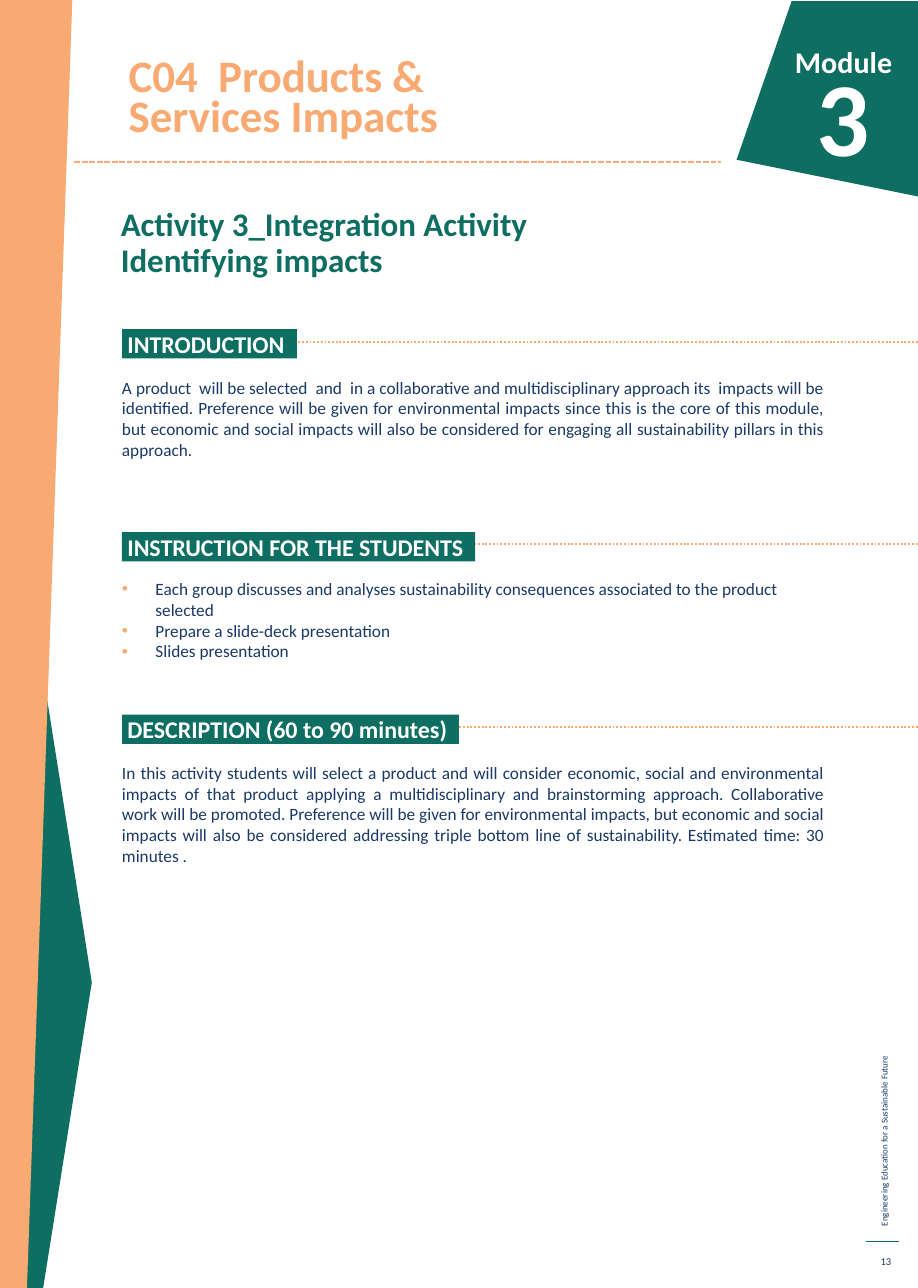
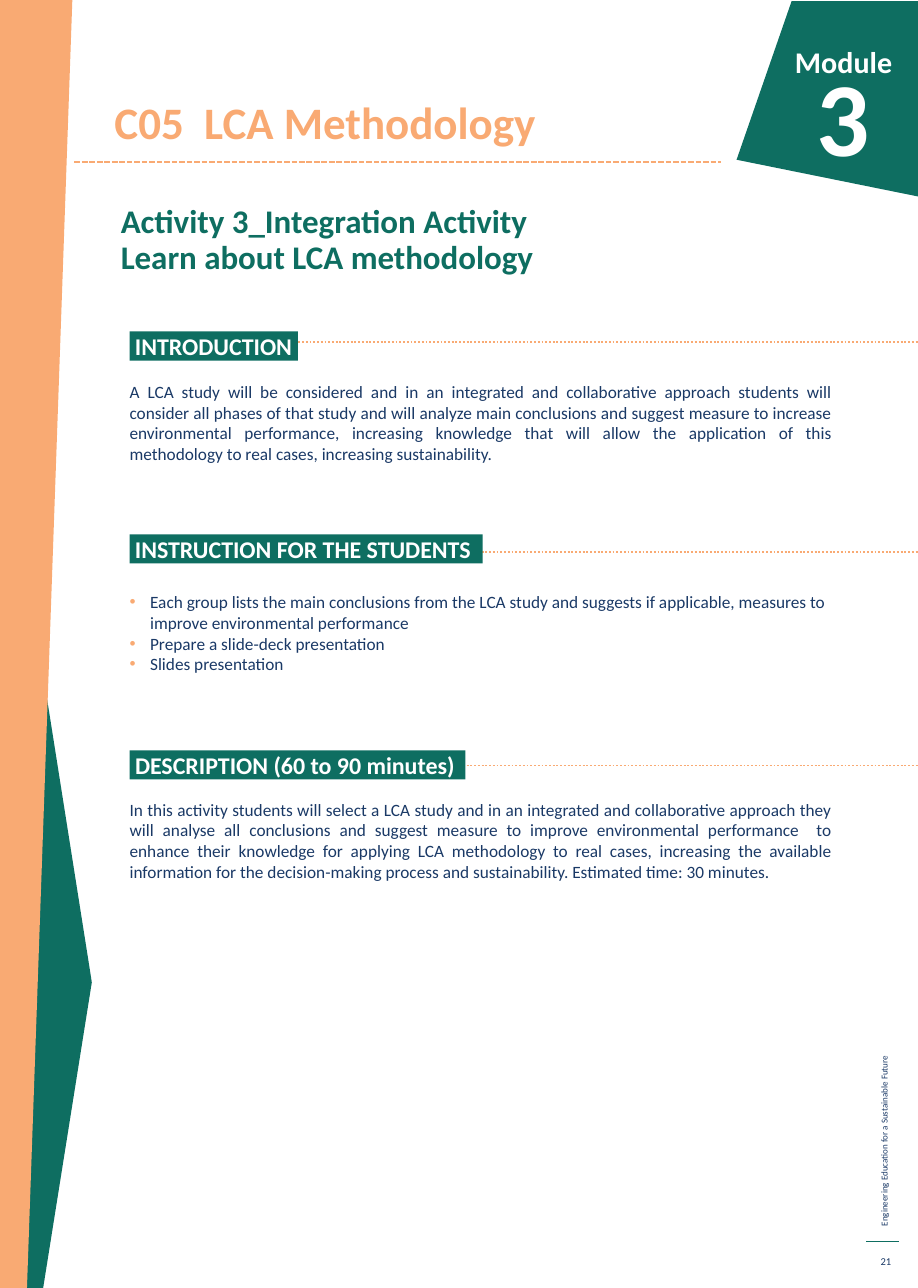
from dataclasses import dataclass

from lxml import etree
from pptx import Presentation
from pptx.dml.color import RGBColor
from pptx.enum.dml import MSO_LINE
from pptx.enum.shapes import MSO_CONNECTOR
from pptx.enum.text import MSO_ANCHOR, MSO_AUTO_SIZE, PP_ALIGN
from pptx.oxml.ns import qn
from pptx.util import Inches, Pt

PAGE_WIDTH, PAGE_HEIGHT = 8.5, 11.93
GREEN, ORANGE, NAVY, WHITE = "0E6E61", "F9AA73", "1A3966", "FFFFFF"
FONT = "Calibri"
TITLE_ONLY = 5
LEFT, RIGHT, JUSTIFY = PP_ALIGN.LEFT, PP_ALIGN.RIGHT, PP_ALIGN.JUSTIFY
TOP, MIDDLE, BOTTOM = MSO_ANCHOR.TOP, MSO_ANCHOR.MIDDLE, MSO_ANCHOR.BOTTOM
DOTS, DASHES = MSO_LINE.ROUND_DOT, MSO_LINE.SQUARE_DOT
NO_AUTOFIT = MSO_AUTO_SIZE.NONE
STRAIGHT = MSO_CONNECTOR.STRAIGHT
DEFAULT_INSETS = (0.1, 0.05)
NO_INSETS = (0, 0)

SIDE_BAND = [(0, 0), (0.67, 0), (0.25, 11.93), (0, 11.93)]
SIDE_ARROW = [(0.4, 11.93), (0.23, 11.93), (0.23, 5.17), (0.83, 8.97), (0.85, 9.1)]
MODULE_BADGE = [(8.5, 0.01), (7.33, 0.01), (6.82, 1.48), (8.5, 1.82)]

LABEL_HEIGHT = 0.27
RULE_LEFT = 2.52
BODY_WIDTH = 6.5


@dataclass
class Section:
    """A labelled block of text; bullets when indent is set."""
    heading: str
    label_top: float
    label_width: float
    rule_top: float
    body_top: float
    body_height: float
    lines: list
    indent: float = 0


@dataclass
class Activity:
    """The content of one activity page."""
    number: str
    title: str
    title_area: tuple
    subtitle: str
    subtitle_area: tuple
    body_left: float
    sections: list


ACTIVITIES = [
    Activity(
        "13", "C04  Products &\vServices Impacts", (1.09, 0, 5.58, 1.36),
        "Activity 3_Integration Activity\vIdentifying impacts",
        (1.02, 1.88, 4.39, 1.05), 1.13,
        [
            Section("INTRODUCTION", 3.05, 1.62, 3.17, 3.49, 0.8, [
                "A product  will be selected  and  in a collaborative and multidisciplinary "
                "approach its  impacts will be identified. Preference will be given for "
                "environmental impacts since this is the core of this module, but economic "
                "and social impacts will also be considered for engaging all sustainability "
                "pillars in this approach."]),
            Section("INSTRUCTION FOR THE STUDENTS", 4.93, 3.27, 5.04, 5.36, 0.8, [
                "Each group discusses and analyses sustainability consequences associated "
                "to the product selected",
                "Prepare a slide-deck presentation",
                "Slides presentation"], 0.31),
            Section("DESCRIPTION (60 to 90 minutes)", 6.62, 3.12, 6.73, 7.06, 1, [
                "In this activity students will select a product and will consider economic, "
                "social and environmental impacts of that product applying a "
                "multidisciplinary and brainstorming approach. Collaborative work will be "
                "promoted. Preference will be given for environmental impacts, but economic "
                "and social impacts will also be considered addressing triple bottom line "
                "of sustainability. Estimated time: 30 minutes ."]),
        ]),
    Activity(
        "21", "C05  LCA Methodology", (0.96, 0.38, 5.36, 1.05),
        "Activity 3_Integration Activity\vLearn about LCA methodology",
        (1.02, 1.85, 5.54, 1.05), 1.2,
        [
            Section("INTRODUCTION", 3.07, 1.56, 3.17, 3.53, 0.8, [
                "A LCA study will be considered and in an integrated and collaborative "
                "approach students will consider all phases of that study and will analyze "
                "main conclusions and suggest measure to increase environmental "
                "performance, increasing knowledge that will allow the application of this "
                "methodology to real cases, increasing sustainability."]),
            Section("INSTRUCTION FOR THE STUDENTS", 4.95, 3.27, 5.11, 5.48, 0.8, [
                "Each group lists the main conclusions from the LCA study and suggests if "
                "applicable, measures to improve environmental performance",
                "Prepare a slide-deck presentation",
                "Slides presentation"], 0.19),
            Section("DESCRIPTION (60 to 90 minutes)", 6.95, 3.11, 7.09, 7.4, 0.8, [
                "In this activity students will select a LCA study and in an integrated and "
                "collaborative approach they will analyse all conclusions and suggest "
                "measure to improve environmental performance  to enhance their knowledge "
                "for applying LCA methodology to real cases, increasing the available "
                "information for the decision-making process and sustainability. Estimated "
                "time: 30 minutes."]),
        ]),
]


def colour(value):
    """Turn a hex string into a colour."""
    return RGBColor.from_string(value)


def add_bullet(para, indent):
    """Give a paragraph an orange bullet with a hanging indent."""
    properties = para._p.get_or_add_pPr()
    properties.set("marL", str(Inches(indent)))
    properties.set("indent", str(-Inches(indent)))
    bullet_colour = etree.SubElement(properties, qn("a:buClr"))
    etree.SubElement(bullet_colour, qn("a:srgbClr")).set("val", ORANGE)
    etree.SubElement(properties, qn("a:buFont")).set("typeface", "Arial")
    etree.SubElement(properties, qn("a:buChar")).set("char", "•")


def write_text(box, lines, size, hue, bold=False, align=LEFT, anchor=TOP,
               insets=DEFAULT_INSETS, spacing=None, indent=0, wrap=True):
    """Fill a box with paragraphs that share one style."""
    frame = box.text_frame
    frame.auto_size = NO_AUTOFIT
    frame.word_wrap = wrap
    frame.vertical_anchor = anchor
    frame.margin_left = frame.margin_right = Inches(insets[0])
    frame.margin_top = frame.margin_bottom = Inches(insets[1])
    for index, line in enumerate(lines):
        para = frame.add_paragraph() if index else frame.paragraphs[0]
        para.text = line
        para.alignment = align
        if spacing:
            para.line_spacing = spacing
        if indent:
            add_bullet(para, indent)
        font = para.font
        font.name, font.size, font.bold = FONT, Pt(size), bold
        font.color.rgb = colour(hue)


def add_text(page, area, lines, size, hue, **style):
    """Add a text box and return it."""
    box = page.shapes.add_textbox(*map(Inches, area))
    write_text(box, lines, size, hue, **style)
    return box


def add_polygon(page, points, fill):
    """Add a closed outline with a plain fill."""
    corners = [(Inches(x), Inches(y)) for x, y in points]
    builder = page.shapes.build_freeform(*corners[0])
    builder.add_line_segments(corners[1:], close=True)
    shape = builder.convert_to_shape()
    shape.shadow.inherit = False
    shape.fill.solid()
    shape.fill.fore_color.rgb = colour(fill)
    shape.line.fill.background()


def add_rule(page, left, right, top, hue, width, dash=None):
    """Add a horizontal line."""
    rule = page.shapes.add_connector(
        STRAIGHT, Inches(left), Inches(top), Inches(right), Inches(top))
    rule.line.color.rgb = colour(hue)
    rule.line.width = Pt(width)
    if dash:
        rule.line.dash_style = dash
    etree.SubElement(rule._element.spPr, qn("a:effectLst"))


def add_frame(page, number):
    """Add the side bands, module badge and footer of every page."""
    motto = add_text(page, (5.94, 9.11, 4.49, 0.2),
                     ["Engineering Education for a Sustainable Future"], 6, NAVY)
    motto.rotation = 270
    add_rule(page, 8.02, 8.32, 11.5, GREEN, 0.75)
    add_text(page, (8.02, 11.54, 0.33, 0.29), [number], 7, NAVY,
             align=RIGHT, anchor=MIDDLE)
    add_polygon(page, SIDE_ARROW, GREEN)
    add_polygon(page, SIDE_BAND, ORANGE)
    add_polygon(page, MODULE_BADGE, GREEN)
    add_text(page, (6.56, 0.35, 1.8, 1.42), ["Module"], 20, WHITE, bold=True, align=RIGHT)
    add_text(page, (6.35, 0.43, 1.8, 1.42), ["3"], 70, WHITE, bold=True, align=RIGHT)
    add_rule(page, 0.69, 6.68, 1.5, ORANGE, 1.25, DASHES)


def set_title(page, text, area):
    """Place and format the title placeholder."""
    title = page.shapes.title
    title.left, title.top, title.width, title.height = map(Inches, area)
    write_text(title, [text], 30, ORANGE, bold=True, anchor=BOTTOM, spacing=Pt(26.8))


def add_section(page, left, section):
    """Add a dotted rule, a filled label and the text below it."""
    add_rule(page, RULE_LEFT, PAGE_WIDTH, section.rule_top, ORANGE, 1.25, DOTS)
    label = add_text(page, (left, section.label_top, section.label_width, LABEL_HEIGHT),
                     [section.heading], 16, WHITE, bold=True, anchor=MIDDLE,
                     insets=(0.05, 0), wrap=False)
    label.fill.solid()
    label.fill.fore_color.rgb = colour(GREEN)
    add_text(page, (left, section.body_top, BODY_WIDTH, section.body_height),
             section.lines, 11.5, NAVY, align=LEFT if section.indent else JUSTIFY,
             insets=NO_INSETS, indent=section.indent)


def add_activity(deck, activity):
    """Build one activity page."""
    page = deck.slides.add_slide(deck.slide_layouts[TITLE_ONLY])
    add_frame(page, activity.number)
    set_title(page, activity.title, activity.title_area)
    add_text(page, activity.subtitle_area, [activity.subtitle], 22, GREEN,
             bold=True, spacing=0.9)
    for section in activity.sections:
        add_section(page, activity.body_left, section)


def main():
    """Build and save the deck."""
    deck = Presentation()
    deck.slide_width, deck.slide_height = Inches(PAGE_WIDTH), Inches(PAGE_HEIGHT)
    for activity in ACTIVITIES:
        add_activity(deck, activity)
    deck.save("out.pptx")


if __name__ == "__main__":
    main()
